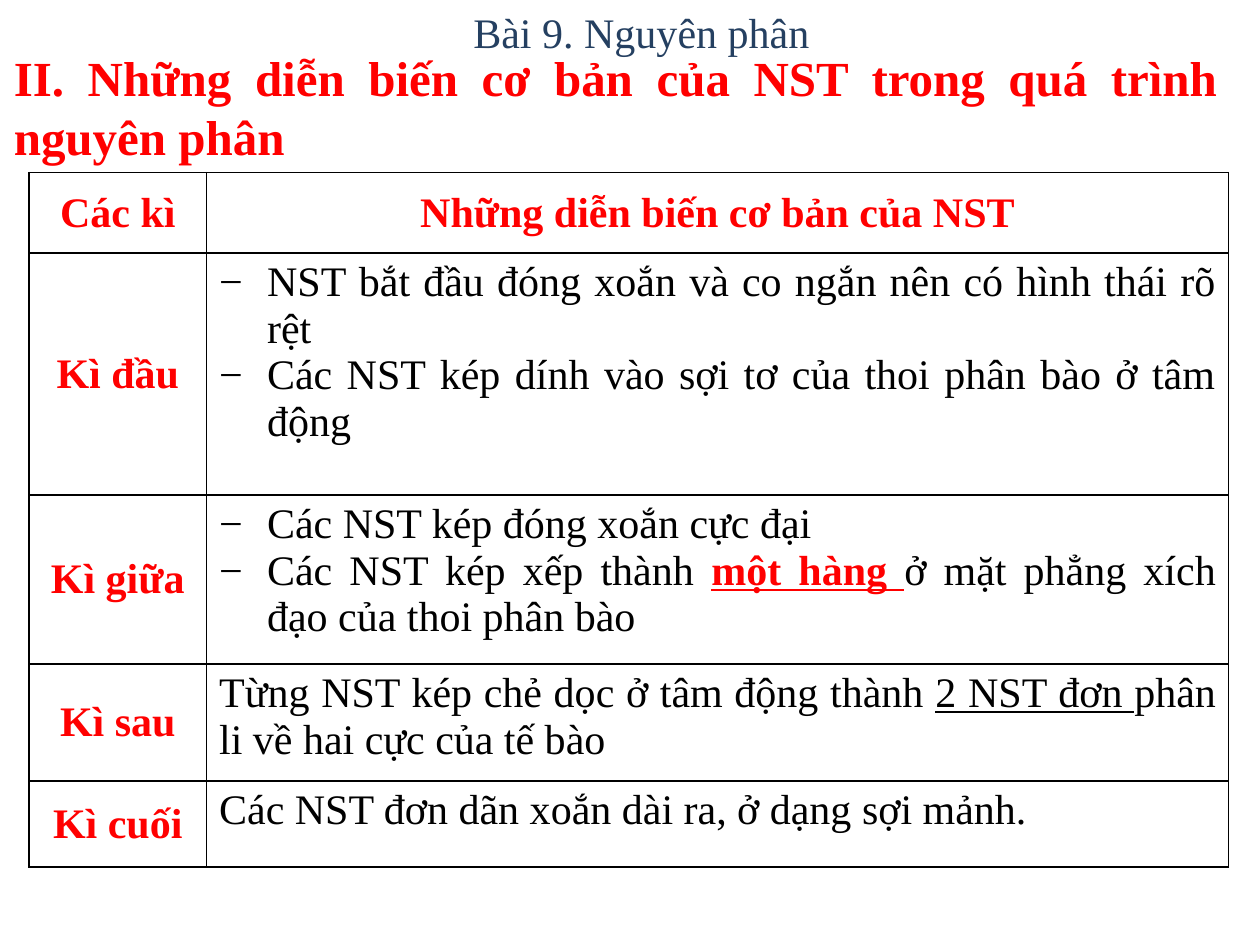
"""Build the mitosis slide: lesson label, section title and table of phases."""
import dataclasses

import lxml.etree
import pptx
import pptx.dml.color
import pptx.enum.text
import pptx.oxml.ns
import pptx.util
from pptx.util import Inches


@dataclasses.dataclass(frozen=True)
class Theme:
    font: str = "Times New Roman"
    navy: str = "254061"
    red: str = "FF0000"
    black: str = "000000"
    title_size: int = 28
    text_size: int = 24
    border: float = 1


theme = Theme()
ALIGN = pptx.enum.text.PP_ALIGN
ANCHOR = pptx.enum.text.MSO_ANCHOR
qn = pptx.oxml.ns.qn


def write(para, text, size=theme.text_size, color=theme.black, bold=False,
          underline=False, align=ALIGN.JUSTIFY):
    """Add one formatted span to a paragraph."""
    para.alignment = align
    span = para.add_run()
    span.text = text
    span.font.name = theme.font
    span.font.size = pptx.util.Pt(size)
    span.font.bold = bold
    span.font.underline = underline
    span.font.color.rgb = pptx.dml.color.RGBColor.from_string(color)


def draw_borders(cell):
    """Give a cell no fill and a thin line on all four sides."""
    cell.fill.background()
    properties = cell._tc.get_or_add_tcPr()
    for index, side in enumerate(("lnL", "lnR", "lnT", "lnB")):
        line = lxml.etree.Element(qn("a:" + side), w=str(pptx.util.Pt(theme.border)))
        fill = lxml.etree.SubElement(line, qn("a:solidFill"))
        lxml.etree.SubElement(fill, qn("a:srgbClr"), val=theme.black)
        properties.insert(index, line)


PLAIN = {}
KEY = {"color": theme.red, "bold": True, "underline": True}
UNDERLINED = {"underline": True}
HEADER = ("Các kì", "Những diễn biến cơ bản của NST")
PHASES = [
    ("Kì đầu", True, [
        [("NST bắt đầu đóng xoắn và co ngắn nên có hình thái rõ rệt", PLAIN)],
        [("Các NST kép dính vào sợi tơ của thoi phân bào ở tâm động", PLAIN)],
    ]),
    ("Kì giữa", True, [
        [("Các NST kép đóng xoắn cực đại", PLAIN)],
        [("Các NST kép xếp thành ", PLAIN), ("một hàng ", KEY),
         ("ở mặt phẳng xích đạo của thoi phân bào", PLAIN)],
    ]),
    ("Kì sau", False, [
        [("Từng NST kép chẻ dọc ở tâm động thành ", PLAIN),
         ("2 NST đơn ", UNDERLINED), ("phân li về hai cực của tế bào", PLAIN)],
    ]),
    ("Kì cuối", False, [
        [("Các NST đơn dãn xoắn dài ra, ở dạng sợi mảnh.", PLAIN)],
    ]),
]
COLUMN_WIDTHS = (1.41, 8.11)
ROW_HEIGHTS = (0.64, 1.92, 1.34, 0.93, 0.68)

deck = pptx.Presentation()
deck.slide_width, deck.slide_height = Inches(10), Inches(7.5)
page = deck.slides.add_slide(deck.slide_layouts[5])

label = page.shapes.add_textbox(Inches(2.45), Inches(0), Inches(5.28), Inches(0.51))
label.text_frame.word_wrap = True
write(label.text_frame.paragraphs[0], "Bài 9. Nguyên phân",
      color=theme.navy, align=ALIGN.CENTER)

title = page.shapes.title
title.left, title.top = Inches(0.01), Inches(0.33)
title.width, title.height = Inches(9.75), Inches(1.04)
title.text_frame.auto_size = pptx.enum.text.MSO_AUTO_SIZE.NONE
title.text_frame.vertical_anchor = ANCHOR.TOP
write(title.text_frame.paragraphs[0],
      "II. Những diễn biến cơ bản của NST trong quá trình nguyên phân",
      size=theme.title_size, color=theme.red, bold=True)

table = page.shapes.add_table(
    len(ROW_HEIGHTS), len(COLUMN_WIDTHS), Inches(0.23), Inches(1.37),
    Inches(sum(COLUMN_WIDTHS)), Inches(sum(ROW_HEIGHTS))).table
table.first_row = table.horz_banding = False
for column, width in zip(table.columns, COLUMN_WIDTHS):
    column.width = Inches(width)
for row, height in zip(table.rows, ROW_HEIGHTS):
    row.height = Inches(height)
for cell in table.iter_cells():
    draw_borders(cell)

headings = [(table.cell(0, index), text) for index, text in enumerate(HEADER)]
headings += [(table.cell(index, 0), phase[0]) for index, phase in enumerate(PHASES, 1)]
for cell, text in headings:
    cell.vertical_anchor = ANCHOR.MIDDLE
    write(cell.text_frame.paragraphs[0], text, color=theme.red, bold=True,
          align=ALIGN.CENTER)

for index, (name, bulleted, events) in enumerate(PHASES, 1):
    frame = table.cell(index, 1).text_frame
    for number, event in enumerate(events):
        para = frame.add_paragraph() if number else frame.paragraphs[0]
        for text, style in event:
            write(para, text, **style)
        if bulleted:
            properties = para._p.get_or_add_pPr()
            properties.set("marL", str(Inches(0.38)))
            properties.set("indent", str(Inches(-0.38)))
            lxml.etree.SubElement(properties, qn("a:buFont"), typeface=theme.font)
            lxml.etree.SubElement(properties, qn("a:buChar"), char="−")

deck.save("out.pptx")
